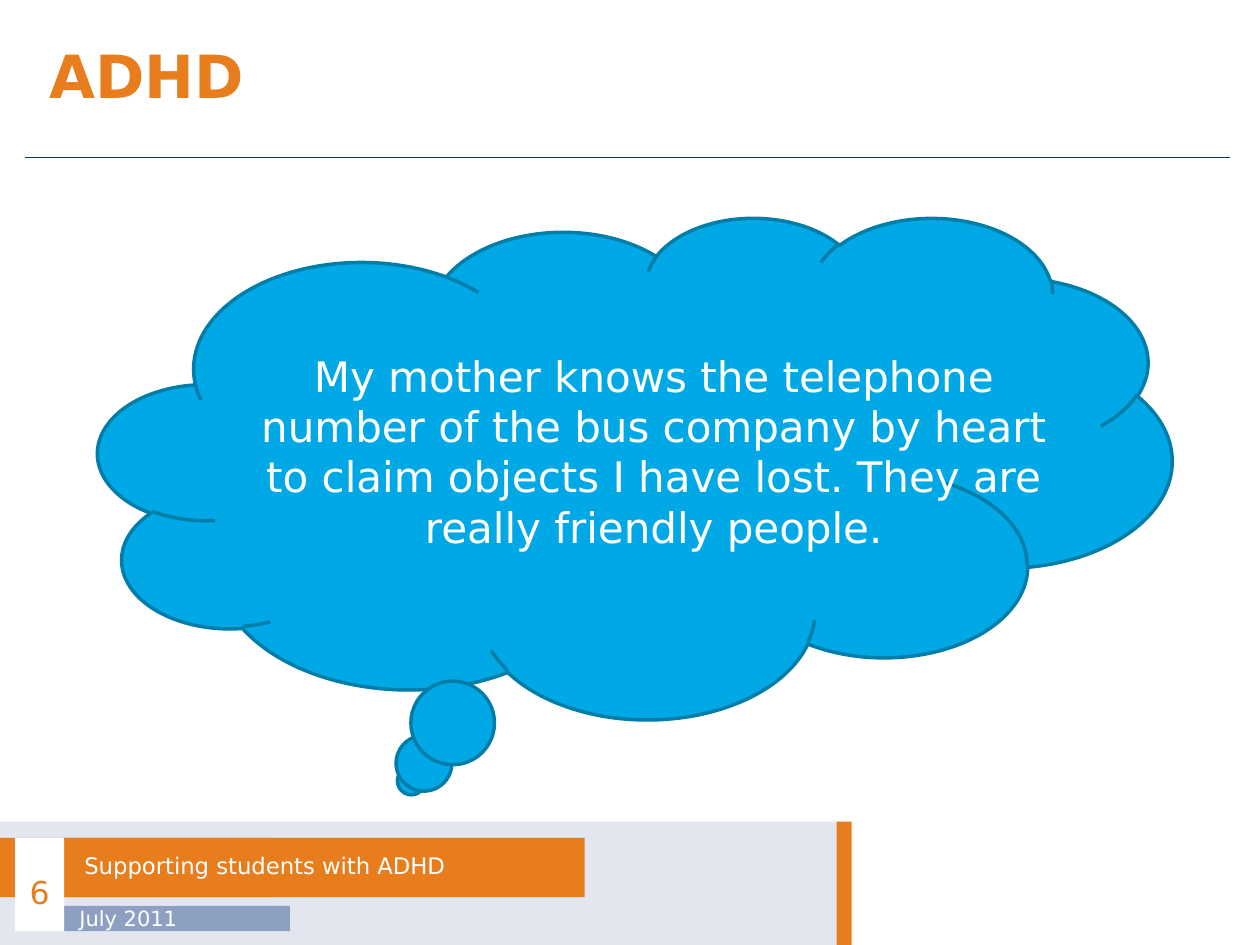
from dataclasses import dataclass

from lxml.etree import SubElement
from pptx import Presentation
from pptx.dml.color import RGBColor
from pptx.enum.shapes import MSO_CONNECTOR as CONNECTOR, MSO_SHAPE as SHAPE
from pptx.enum.text import MSO_ANCHOR as ANCHOR, PP_ALIGN as ALIGN
from pptx.oxml.ns import qn
from pptx.util import Inches, Pt


@dataclass(frozen=True)
class Theme:
    font: str = "DejaVu Sans"
    orange: str = "E87D1E"
    white: str = "FFFFFF"
    pale: str = "E3E6EF"
    slate: str = "8EA0C2"
    navy: str = "003C72"
    sky: str = "00A9E5"
    sky_edge: str = "007DA9"
    title_size: int = 34
    quote_size: int = 24
    number_size: int = 18
    footer_size: int = 13
    date_size: int = 12


THEME = Theme()
FOOTER_TOP, FOOTER_HEIGHT = 6.52, 0.98
BAND_TOP, BAND_HEIGHT = 6.65, 0.47
LABEL_LEFT = 0.51


def rgb(value):
    return RGBColor.from_string(value)


def add_filled(page, bounds, color, kind=SHAPE.RECTANGLE, edge=None):
    shape = page.shapes.add_shape(kind, *map(Inches, bounds))
    shape.shadow.inherit = False
    shape.fill.solid()
    shape.fill.fore_color.rgb = rgb(color)
    if edge:
        shape.line.color.rgb = rgb(edge)
        shape.line.width = Pt(2)
    else:
        shape.line.fill.background()
    return shape


def add_rule(page, left, right, top):
    rule = page.shapes.add_connector(
        CONNECTOR.STRAIGHT, *map(Inches, (left, top, right, top)))
    rule.line.color.rgb = rgb(THEME.navy)
    rule.line.width = Pt(0.5)
    SubElement(rule._element.spPr, qn("a:effectLst"))


def write(shape, text, size, color=THEME.white, insets=(0.1, 0.05, 0.1, 0.05),
          align=ALIGN.LEFT, anchor=ANCHOR.MIDDLE, spacing=None, bold=False, wrap=True):
    """Fill a shape with one paragraph; insets are left, top, right, bottom."""
    frame = shape.text_frame
    frame.word_wrap = wrap
    frame.vertical_anchor = anchor
    (frame.margin_left, frame.margin_top,
     frame.margin_right, frame.margin_bottom) = map(Inches, insets)
    para = frame.paragraphs[0]
    para.text = text
    para.alignment = align
    para.line_spacing = spacing
    font = para.font
    font.name, font.size, font.bold = THEME.font, Pt(size), bold
    font.color.rgb = rgb(color)


def add_text(page, bounds, text, size, **style):
    box = page.shapes.add_textbox(*map(Inches, bounds))
    write(box, text, size, **style)


def add_footer(page):
    date = add_filled(page, (LABEL_LEFT, 7.19, 1.79, 0.2), THEME.slate)
    write(date, "July 2011", THEME.date_size, insets=(0.12, 0, 0.12, 0), wrap=False)

    label = add_filled(page, (LABEL_LEFT, BAND_TOP, 4.13, BAND_HEIGHT), THEME.orange)
    write(label, "Supporting students with ADHD", THEME.footer_size,
          insets=(0.16, 0, 0.16, 0), spacing=0.9)

    number = add_filled(page, (0.12, BAND_TOP, 0.39, 0.74), THEME.white)
    write(number, "6", THEME.number_size, color=THEME.orange,
          insets=(0, 0.12, 0, 0), align=ALIGN.CENTER, wrap=False)


def add_backdrop(page):
    add_filled(page, (0, FOOTER_TOP, 6.72, FOOTER_HEIGHT), THEME.pale)
    add_filled(page, (0, BAND_TOP, 2.16, BAND_HEIGHT), THEME.orange)
    add_filled(page, (6.72, FOOTER_TOP, 3.28, FOOTER_HEIGHT), THEME.white)
    add_filled(page, (6.64, FOOTER_TOP, 0.12, FOOTER_HEIGHT), THEME.orange)
    add_rule(page, 0.2, 9.76, 1.25)


def main():
    deck = Presentation()
    deck.slide_width, deck.slide_height = Inches(10), Inches(7.5)
    page = deck.slides.add_slide(deck.slide_layouts[6])

    add_backdrop(page)
    add_text(page, (0, 0, 10, 1.25), "ADHD", THEME.title_size, color=THEME.orange,
             insets=(0.39, 0.2, 0.39, 0.16), spacing=0.8, bold=True)
    add_footer(page)
    add_filled(page, (0.78, 1.72, 8.52, 3.98), THEME.sky,
               SHAPE.CLOUD_CALLOUT, THEME.sky_edge)
    add_text(page, (1.95, 2.73, 6.48, 1.72),
             "My mother knows the telephone number of the bus company by heart "
             "to claim objects I have lost. They are really friendly people.",
             THEME.quote_size, align=ALIGN.CENTER, anchor=ANCHOR.TOP)

    deck.save("out.pptx")


if __name__ == "__main__":
    main()
